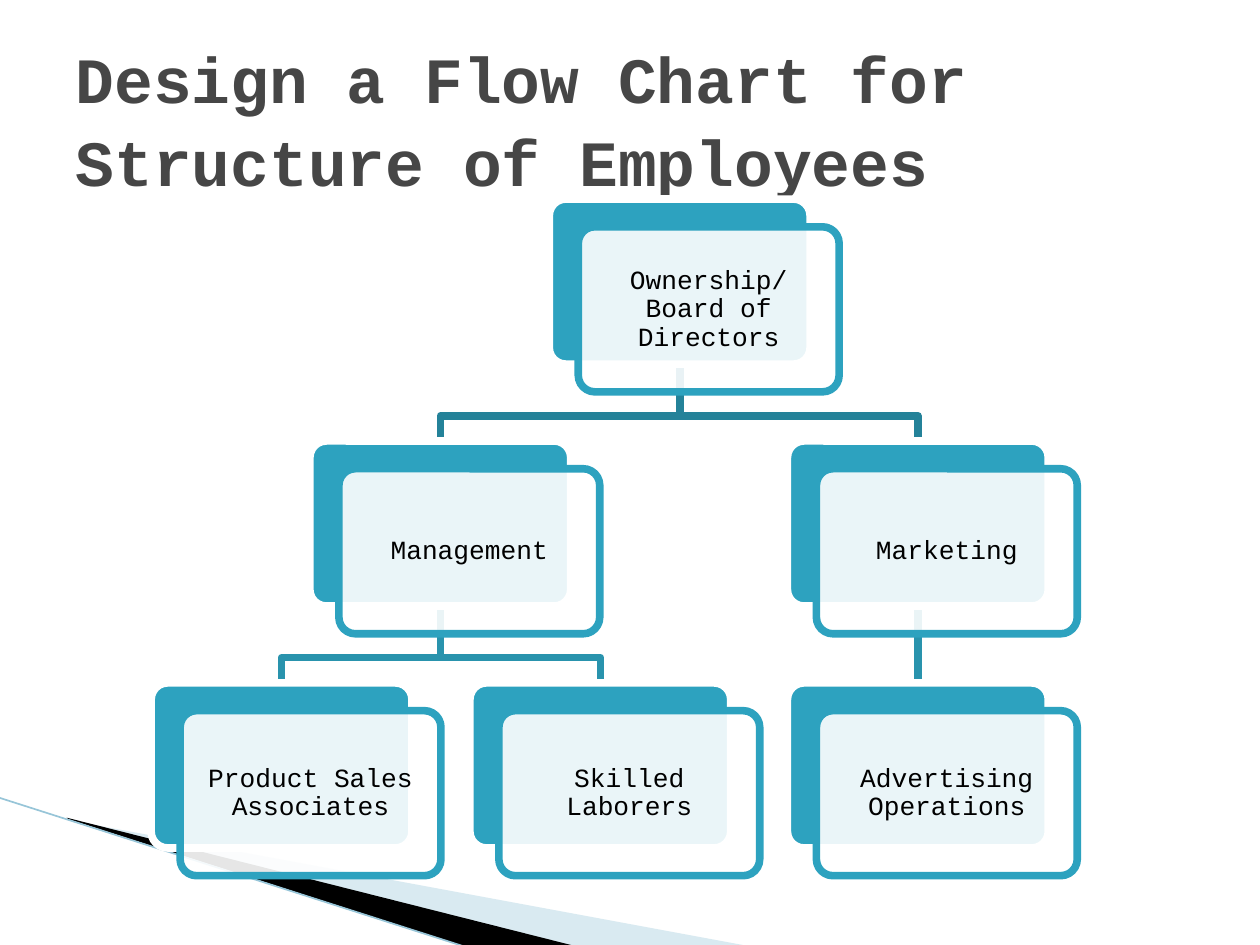
from dataclasses import dataclass

import pptx
import pptx.dml.color
import pptx.enum.shapes
import pptx.enum.text
import pptx.oxml
import pptx.oxml.ns
import pptx.util
from pptx.dml.color import RGBColor
from pptx.util import Inches, Pt

TEAL = RGBColor(0x2D, 0xA2, 0xBF)
TOP_LINK = RGBColor(0x24, 0x82, 0x99)
LOWER_LINK = RGBColor(0x29, 0x93, 0xAD)
PALE_BLUE = RGBColor(0xA0, 0xCB, 0xDC)
EDGE_BLUE = RGBColor(0x97, 0xC5, 0xD8)
GRAY = RGBColor(0x46, 0x46, 0x46)
WHITE = RGBColor(0xFF, 0xFF, 0xFF)
BLACK = RGBColor(0, 0, 0)

FONT = "Courier New"
CARD_WIDTH, CARD_HEIGHT = 2.07, 1.31
OFFSET_X, OFFSET_Y = 0.23, 0.22
LEVEL_TOPS = (1.58, 3.5, 5.42)
BEND_DROP = 0.41
LINE_WIDTH = Pt(4.33)


@dataclass(frozen=True)
class Card:
    text: str
    left: float
    level: int

    @property
    def top(self) -> float:
        return LEVEL_TOPS[self.level]

    @property
    def center(self) -> float:
        return self.left + CARD_WIDTH / 2

    @property
    def bottom(self) -> float:
        return self.top + CARD_HEIGHT


OWNERS = Card("Ownership/Board of Directors", 4.36, 0)
MANAGEMENT = Card("Management", 2.46, 1)
SALES = Card("Product Sales Associates", 1.2, 2)
LABORERS = Card("Skilled Laborers", 3.73, 2)
MARKETING = Card("Marketing", 6.25, 1)
ADVERTISING = Card("Advertising Operations", 6.25, 2)

CARDS = (OWNERS, MANAGEMENT, SALES, LABORERS, MARKETING, ADVERTISING)
LINKS = (
    (MARKETING, ADVERTISING),
    (OWNERS, MARKETING),
    (MANAGEMENT, LABORERS),
    (MANAGEMENT, SALES),
    (OWNERS, MANAGEMENT),
)


def set_opacity(shape, percent: int) -> None:
    color = shape.fill._xPr.find(".//" + pptx.oxml.ns.qn("a:srgbClr"))
    alpha = pptx.oxml.parse_xml(
        f'<a:alpha {pptx.oxml.ns.nsdecls("a")} val="{percent * 1000}"/>'
    )
    color.append(alpha)


def draw_path(page, points: list[tuple[float, float]], closed: bool):
    corners = [(Inches(x), Inches(y)) for x, y in points]
    builder = page.shapes.build_freeform(*corners[0])
    builder.add_line_segments(corners[1:], close=closed)
    shape = builder.convert_to_shape()
    shape.shadow.inherit = False
    return shape


def draw_wedge(page, points: list[tuple[float, float]], color: RGBColor):
    wedge = draw_path(page, points, True)
    wedge.fill.solid()
    wedge.fill.fore_color.rgb = color
    wedge.line.fill.background()
    return wedge


def draw_line(page, start: tuple[float, float], end: tuple[float, float]):
    line = page.shapes.add_connector(
        pptx.enum.shapes.MSO_CONNECTOR.STRAIGHT,
        *(Inches(value) for value in start + end),
    )
    line._element.spPr.append(
        pptx.oxml.parse_xml(f'<a:effectLst {pptx.oxml.ns.nsdecls("a")}/>')
    )
    return line


def draw_link(page, parent: Card, child: Card) -> None:
    start, end = (parent.center, parent.bottom), (child.center, child.top)
    if parent.center == child.center:
        link = draw_line(page, start, end)
    else:
        bend = parent.bottom + BEND_DROP
        points = [start, (parent.center, bend), (child.center, bend), end]
        link = draw_path(page, points, False)
        link.fill.background()
    link.line.color.rgb = TOP_LINK if parent.level == 0 else LOWER_LINK
    link.line.width = LINE_WIDTH


def draw_panel(page, left: float, top: float, fill: RGBColor, line: RGBColor):
    panel = page.shapes.add_shape(
        pptx.enum.shapes.MSO_SHAPE.ROUNDED_RECTANGLE,
        Inches(left), Inches(top), Inches(CARD_WIDTH), Inches(CARD_HEIGHT),
    )
    panel.adjustments[0] = 0.1
    panel.shadow.inherit = False
    panel.fill.solid()
    panel.fill.fore_color.rgb = fill
    panel.line.color.rgb = line
    panel.line.width = LINE_WIDTH
    return panel


def draw_card(page, card: Card) -> None:
    draw_panel(page, card.left, card.top, TEAL, WHITE)
    front = draw_panel(page, card.left + OFFSET_X, card.top + OFFSET_Y, WHITE, TEAL)
    set_opacity(front, 90)
    frame = front.text_frame
    frame.word_wrap = True
    frame.vertical_anchor = pptx.enum.text.MSO_ANCHOR.MIDDLE
    frame.margin_left = frame.margin_right = Inches(0.06)
    frame.margin_top = frame.margin_bottom = Inches(0.06)
    para = frame.paragraphs[0]
    para.text = card.text
    para.alignment = pptx.enum.text.PP_ALIGN.CENTER
    para.line_spacing = 0.9
    para.font.name = FONT
    para.font.size = Pt(15)
    para.font.color.rgb = BLACK


def draw_background(page) -> None:
    band = draw_wedge(
        page, [(0.55, 6.51), (5.95, 7.51), (4.56, 7.51), (0.55, 6.5)], PALE_BLUE
    )
    set_opacity(band, 40)
    draw_wedge(page, [(0.53, 6.49), (4.57, 7.51), (3.72, 7.52), (0.54, 6.5)], BLACK)
    edge = draw_line(page, (-0.01, 6.33), (3.71, 7.52))
    edge.line.color.rgb = EDGE_BLUE
    edge.line.width = Pt(0.95)


def write_title(page) -> None:
    title = page.shapes.title
    title.left, title.top = Inches(0.5), Inches(0.3)
    title.width, title.height = Inches(9), Inches(1.25)
    frame = title.text_frame
    frame.word_wrap = True
    frame.auto_size = pptx.enum.text.MSO_AUTO_SIZE.NONE
    frame.vertical_anchor = pptx.enum.text.MSO_ANCHOR.MIDDLE
    para = frame.paragraphs[0]
    para.text = "Design a Flow Chart for Structure of Employees"
    para.alignment = pptx.enum.text.PP_ALIGN.LEFT
    para.line_spacing = 1.07
    para.font.name = FONT
    para.font.size = Pt(36.9)
    para.font.bold = True
    para.font.color.rgb = GRAY


def main() -> None:
    deck = pptx.Presentation()
    deck.slide_width, deck.slide_height = Inches(10), Inches(7.5)
    page = deck.slides.add_slide(deck.slide_layouts[5])
    draw_background(page)
    for parent, child in LINKS:
        draw_link(page, parent, child)
    for card in CARDS:
        draw_card(page, card)
    write_title(page)
    deck.save("out.pptx")


if __name__ == "__main__":
    main()
